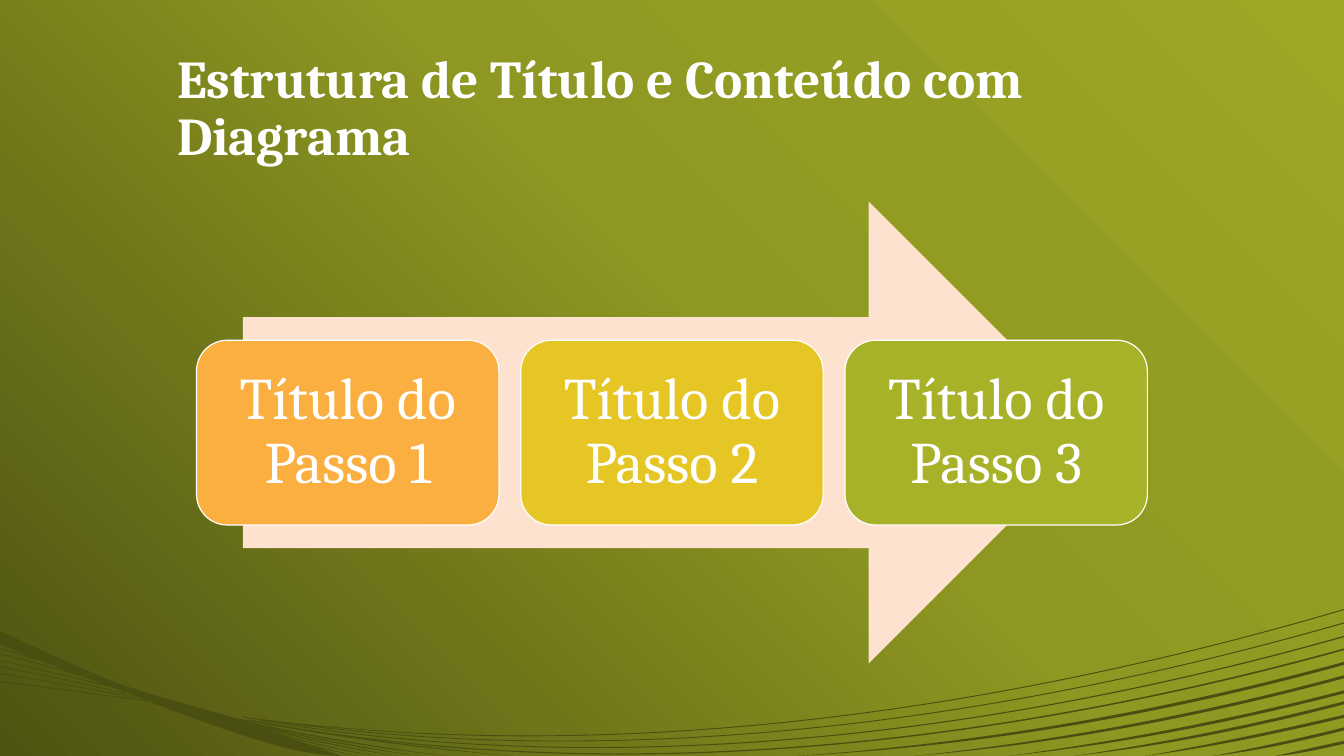
from copy import deepcopy
from dataclasses import dataclass

from lxml.etree import SubElement
from pptx import Presentation
from pptx.dml.color import RGBColor
from pptx.enum.shapes import MSO_SHAPE as SHAPE
from pptx.enum.text import MSO_ANCHOR as ANCHOR, PP_ALIGN as ALIGN
from pptx.oxml.ns import qn
from pptx.util import Emu, Inches, Pt

COLS, ROWS = 160, 90
CELL = Inches(1 / 12)
FONT = "Cambria"
WHITE, WAVE_COLOR, ARROW_COLOR = "FFFFFF", "4A4E11", "FDE3CF"
BACKGROUND = [(0, "9DA625"), (0.45, "8E9721"), (1, "4E5312")]


@dataclass
class Box:
    col: float
    row: float
    cols: float
    rows: float

    def emu(self) -> list[int]:
        return [grid(n) for n in (self.col, self.row, self.cols, self.rows)]


@dataclass
class Wave:
    """A thin band along a cubic curve, with a thickness at each end."""
    points: list[tuple[float, float]]
    thick_start: float
    thick_end: float

    def outline(self) -> list[tuple[int, int]]:
        growth = (self.thick_end - self.thick_start) / 3
        lower = [(x, y + self.thick_start + growth * i)
                 for i, (x, y) in enumerate(self.points)]
        for i in (0, 3):
            lower[i] = (lower[i][0], min(lower[i][1], ROWS))
        return [(grid(x), grid(y)) for x, y in self.points + lower[::-1]]


@dataclass
class Step:
    title: str
    color: str


def grid(cells: float) -> Emu:
    return Emu(round(cells * CELL))


def rgb(color: str) -> RGBColor:
    return RGBColor.from_string(color)


def arc(start: tuple[float, float], end: tuple[float, float], bend: float,
        thick_start: float, thick_end: float) -> Wave:
    """Band whose middle handle lies at the share `bend` of its height."""
    (x0, y0), (x1, y1) = start, end
    handle = ((x0 + x1) / 2, y0 + (y1 - y0) * bend)
    controls = [tuple((a + 2 * h) / 3 for a, h in zip(p, handle)) for p in (start, end)]
    return Wave([start, *controls, end], thick_start, thick_end)


def draw_waves(s, waves: list[Wave]) -> None:
    """Draw the bands as one shape, a contour each."""
    outlines = [wave.outline() for wave in waves]
    builder = s.shapes.build_freeform(*outlines[0][0], scale=1.0)
    for i, (first, *others) in enumerate(outlines):
        if i:
            builder.move_to(*first)
        builder.add_line_segments(others, close=True)
    sp = builder.convert_to_shape()
    sp.shadow.inherit = False
    paint(sp, WAVE_COLOR)
    # Each contour has seven segments: a curve, a line and a curve back
    segments = list(sp._element.iter(qn("a:lnTo")))
    for i in range(0, len(segments), 7):
        for first in (i, i + 4):
            bend_segments(segments[first:first + 3])


def bend_segments(segments: list) -> None:
    """Turn three straight segments into one cubic curve."""
    holder = segments[0].getparent()
    cubic = SubElement(holder, qn("a:cubicBezTo"))
    holder.replace(segments[0], cubic)
    for segment in segments:
        cubic.append(segment[0])
    for segment in segments[1:]:
        holder.remove(segment)


def paint(sp, color: str, line: str | None = None) -> None:
    sp.fill.solid()
    sp.fill.fore_color.rgb = rgb(color)
    if line:
        sp.line.color.rgb = rgb(line)
        sp.line.width = Pt(0.85)
    else:
        sp.line.fill.background()


def add_shape(s, kind: SHAPE, box: Box, color: str, line: str | None = None):
    sp = s.shapes.add_shape(kind, *box.emu())
    sp.shadow.inherit = False
    paint(sp, color, line)
    return sp


def write(sp, text: str, size: float, anchor: ANCHOR, align: ALIGN, bold: bool = False) -> None:
    tf = sp.text_frame
    tf.word_wrap = True
    tf.vertical_anchor = anchor
    p = tf.paragraphs[0]
    p.text = text
    p.alignment = align
    p.line_spacing = 0.9
    p.font.name, p.font.size, p.font.bold = FONT, Pt(size), bold
    p.font.color.rgb = rgb(WHITE)


def set_background(s) -> None:
    fill = s.background.fill
    fill.gradient()
    fill.gradient_angle = 225
    stops = next(s._element.iter(qn("a:gsLst")))
    stops.append(deepcopy(stops[-1]))
    for stop, (position, color) in zip(fill.gradient_stops, BACKGROUND):
        stop.position = position
        stop.color.rgb = rgb(color)


# Long lines that cross the slide
LONG = [
    Wave([(28.8, 85.3), (72, 91.2), (117.6, 85), (COLS, 72.5)], 0.1, 0.12),
    Wave([(33.1, 85.9), (75.7, 91.8), (119.9, 85.6), (COLS, 74.1)], 0.1, 0.12),
    Wave([(31, 85.7), (74.2, 93), (119.2, 87.2), (COLS, 75.7)], 0.1, 0.15),
    Wave([(29.4, 85.6), (73, 94), (118.7, 88.6), (COLS, 77.2)], 0.1, 0.2),
]
# Stripes from the bottom to the right edge: bottom column, edge row, bend
RIGHT = [(94.7, 78.8, 0.2), (108.8, 80.4, 0.28), (120, 82.2, 0.34), (127.8, 83.5, 0.36),
         (136.3, 85.1, 0.43), (144.4, 86.6, 0.43), (151.8, 88.2, 0.5)]
# Bottom columns of the lines that leave the knot at the lower left
KNOT = (26.4, 85.2)
BOTTOM = [61.1, 53.3, 50.2, 47.5, 44.9, 42.7]
# Lines from the left edge: edge row, and where they join the body
LEFT = [(81.1, (17.5, 83.4)), (80.1, (16.2, 83)), (79.3, (15, 82.5)),
        (78.6, (12.7, 81.6)), (77.8, (10.9, 80.7)), (77.2, (6.6, 79.1))]
BODY = [
    arc((0, 75.1), (14.4, 81.5), 0.54, 1.6, 0.7),
    arc((14.4, 81.5), (KNOT[0], 85), 0.55, 0.7, 1.7),
    arc((KNOT[0], 85), (40.7, ROWS), 0.52, 1.7, 1.4),
]
STEPS = [Step("Título do Passo 1", "FAAF40"), Step("Título do Passo 2", "E6C624"),
         Step("Título do Passo 3", "A8B228")]


def main() -> None:
    prs = Presentation()
    prs.slide_width, prs.slide_height = grid(COLS), grid(ROWS)
    s = prs.slides.add_slide(prs.slide_layouts[6])
    set_background(s)

    # Waves along the bottom
    right = [arc((x, ROWS), (COLS, y), bend, 0.4, 0.35) for x, y, bend in RIGHT]
    bottom = [arc(KNOT, (x, ROWS), 0.66, 0.1, 0.25) for x in BOTTOM]
    left = [arc((0, y), joint, 0.46, 0.12, 0.12) for y, joint in LEFT]
    for waves in (BODY, LONG, right, bottom, left):
        draw_waves(s, waves)

    # Title
    title = s.shapes.add_textbox(*Box(19.92, 5.28, 120, 15.24).emu())
    write(title, "Estrutura de Título e Conteúdo com Diagrama", 38, ANCHOR.BOTTOM,
          ALIGN.LEFT, bold=True)

    # Arrow with its steps
    add_shape(s, SHAPE.RIGHT_ARROW, Box(28.92, 24, 102, 55), ARROW_COLOR)
    for i, step in enumerate(STEPS):
        sp = add_shape(s, SHAPE.ROUNDED_RECTANGLE, Box(23.4 + 38.6 * i, 40.5, 36, 22),
                       step.color, WHITE)
        tf = sp.text_frame
        tf.margin_left = tf.margin_right = tf.margin_top = tf.margin_bottom = grid(2)
        write(sp, step.title, 42, ANCHOR.MIDDLE, ALIGN.CENTER)

    prs.save("out.pptx")


if __name__ == "__main__":
    main()
